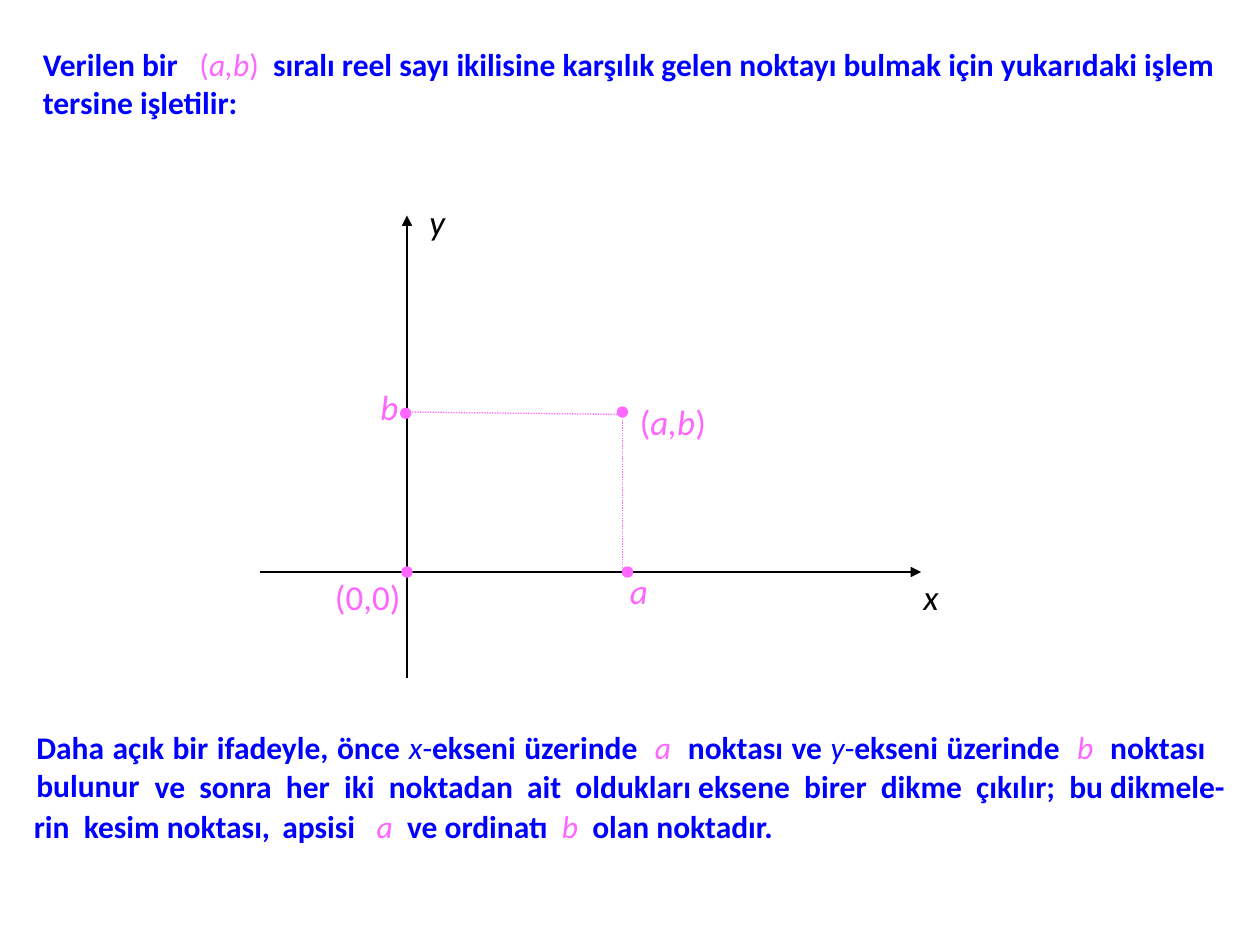
from dataclasses import dataclass

from lxml import etree
from pptx import Presentation, util as u
from pptx.dml.color import RGBColor
from pptx.enum import dml, shapes, text
from pptx.oxml.ns import qn

WIDTH, HEIGHT = u.Inches(10), u.Inches(7.5)
COLS, ROWS = 100, 75
BLUE, PINK, BLACK = "0000FF", "FF66FF", "000000"
DOT = 0.8
ORIGIN_X, ORIGIN_Y = 32.3, 45.4
A_X, B_Y = 49.4, 32.8


@dataclass
class Style:
    color: str
    bold: bool = False
    italic: bool = False


HEAVY = Style(BLUE, bold=True)
PLAIN = Style(BLUE)
AXIS = Style(BLUE, italic=True)
VALUE = Style(PINK, italic=True)
MARK = Style(PINK)
AXIS_NAME = Style(BLACK, italic=True)


@dataclass
class Label:
    col: float
    row: float
    cols: float
    rows: float
    runs: list[tuple[str, Style]]
    size: int = 20
    align: text.PP_ALIGN = text.PP_ALIGN.LEFT


@dataclass
class Line:
    start: tuple[float, float]
    end: tuple[float, float]
    color: str
    arrow: bool = False
    dotted: bool = False


HEADING = Label(2.4, 3.1, 97.6, 7, [
    ("Verilen bir   ", HEAVY), ("(", MARK), ("a,b", VALUE), (")  ", MARK),
    ("sıralı reel sayı ikilisine karşılık gelen noktayı bulmak için "
     "yukarıdaki işlem tersine işletilir:", HEAVY)], 18)

LABELS = [
    Label(72.3, 45.2, 4.2, 4.3, [("x", AXIS_NAME)]),
    Label(33.1, 15.4, 5.5, 4.3, [("y", AXIS_NAME)]),
    Label(49, 44.7, 5, 4.3, [("a", VALUE)]),
    Label(29.2, 30.1, 5, 4.3, [("b", VALUE)]),
    Label(49.8, 31.3, 7.5, 4.3, [("(", MARK), ("a,b", VALUE), (")", MARK)]),
    Label(25.6, 45.2, 7.5, 4.3, [("(0,0)", MARK)]),
    Label(1.9, 57.3, 96.1, 7, [
        ("Daha açık bir ifadeyle, önce ", HEAVY), ("x", AXIS), ("-", PLAIN),
        ("ekseni üzerinde  ", HEAVY), ("a ", VALUE), (" noktası ve ", HEAVY),
        ("y", AXIS), ("-", PLAIN), ("ekseni üzerinde  ", HEAVY),
        ("b  ", VALUE), ("noktası   bulunur", HEAVY)],
        18, text.PP_ALIGN.JUSTIFY),
    Label(11.3, 60.4, 88.7, 4, [
        ("ve  sonra  her  iki  noktadan  ait  oldukları eksene  birer  dikme  "
         "çıkılır;  bu dikmele-", HEAVY)], 18),
    Label(1.7, 63.6, 30.9, 4, [("rin  kesim noktası,", HEAVY)], 18),
    Label(20.3, 63.6, 70.1, 4, [
        ("  apsisi   ", HEAVY), ("a", VALUE), ("  ve ordinatı  ", HEAVY),
        ("b", VALUE), ("  olan noktadır.", HEAVY)], 18),
]

LINES = [
    Line((20.6, ORIGIN_Y), (73.1, ORIGIN_Y), BLACK, arrow=True),
    Line((ORIGIN_X, 53.8), (ORIGIN_X, 17.1), BLACK, arrow=True),
    Line((A_X, 32.9), (A_X, ORIGIN_Y), PINK, dotted=True),
    Line((49.8, 32.9), (ORIGIN_X, 32.7), PINK, dotted=True),
]

DOTS = [(A_X, 32.7), (ORIGIN_X, ORIGIN_Y), (49.8, ORIGIN_Y), (32.2, B_Y)]


def rgb(value: str) -> RGBColor:
    return RGBColor.from_string(value)


def x(cols: float) -> int:
    return round(WIDTH * cols / COLS)


def y(rows: float) -> int:
    return round(HEIGHT * rows / ROWS)


def fill_text(sp, label: Label) -> None:
    sp.left, sp.top = x(label.col), y(label.row)
    sp.width, sp.height = x(label.cols), y(label.rows)
    tf = sp.text_frame
    tf.word_wrap = True
    tf.auto_size = text.MSO_AUTO_SIZE.SHAPE_TO_FIT_TEXT
    tf.vertical_anchor = text.MSO_ANCHOR.TOP
    p = tf.paragraphs[0]
    p.alignment = label.align
    for words, style in label.runs:
        r = p.add_run()
        r.text = words
        r.font.name = "Calibri"
        r.font.size = u.Pt(label.size)
        r.font.bold = style.bold
        r.font.italic = style.italic
        r.font.color.rgb = rgb(style.color)


def draw_line(s, line: Line) -> None:
    (x1, y1), (x2, y2) = line.start, line.end
    sp = s.shapes.add_connector(shapes.MSO_CONNECTOR.STRAIGHT,
                                x(x1), y(y1), x(x2), y(y2))
    sp.line.width = u.Pt(0.75)
    sp.line.color.rgb = rgb(line.color)
    if line.dotted:
        sp.line.dash_style = dml.MSO_LINE.ROUND_DOT
    if line.arrow:
        etree.SubElement(sp.line._get_or_add_ln(), qn("a:tailEnd"), type="triangle")
    etree.SubElement(sp._element.spPr, qn("a:effectLst"))


def draw_dot(s, col: float, row: float) -> None:
    sp = s.shapes.add_shape(shapes.MSO_SHAPE.OVAL, x(col - DOT / 2),
                            y(row - DOT / 2), x(DOT), y(DOT))
    sp.shadow.inherit = False
    sp.fill.solid()
    sp.fill.fore_color.rgb = rgb(PINK)
    sp.line.color.rgb = rgb(PINK)
    sp.line.width = u.Pt(0.75)


def main() -> None:
    prs = Presentation()
    prs.slide_width, prs.slide_height = WIDTH, HEIGHT
    s = prs.slides.add_slide(prs.slide_layouts[5])
    fill_text(s.shapes.title, HEADING)
    for line in LINES:
        draw_line(s, line)
    for label in LABELS:
        fill_text(s.shapes.add_textbox(0, 0, 0, 0), label)
    for col, row in DOTS:
        draw_dot(s, col, row)
    prs.save("out.pptx")


if __name__ == "__main__":
    main()
